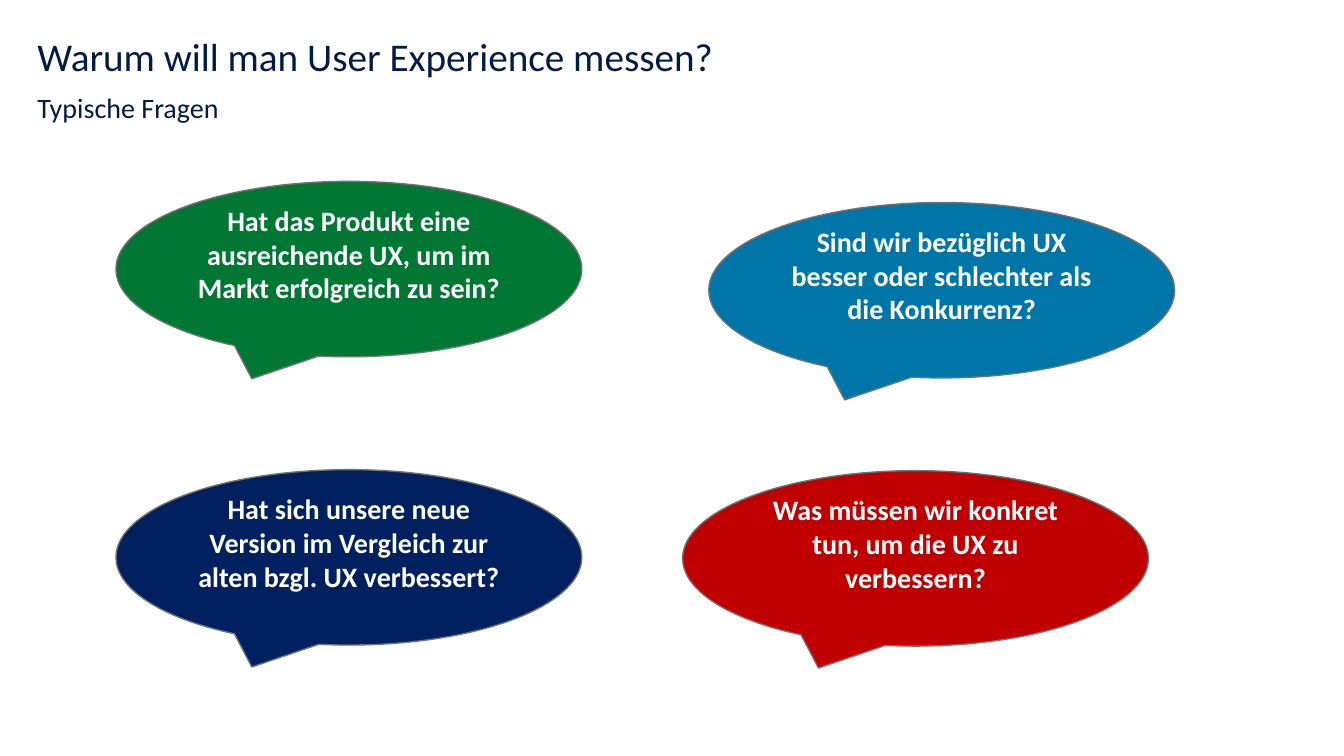
from pptx import Presentation
from pptx.dml.color import RGBColor
from pptx.enum.shapes import MSO_SHAPE
from pptx.enum.text import MSO_ANCHOR, MSO_AUTO_SIZE, PP_ALIGN
from pptx.util import Inches, Pt
from lxml import etree

CALLOUT = MSO_SHAPE.OVAL_CALLOUT
TOP, MIDDLE = MSO_ANCHOR.TOP, MSO_ANCHOR.MIDDLE
LEFT, CENTER = PP_ALIGN.LEFT, PP_ALIGN.CENTER
NO_AUTOFIT = MSO_AUTO_SIZE.NONE
A_NS = "{http://schemas.openxmlformats.org/drawingml/2006/main}"

COLORS = {
    "text": "021B45",
    "white": "FFFFFF",
    "outline": "717171",
    "green": "007833",
    "blue": "0076A8",
    "navy": "002060",
    "red": "C00000",
}

BUBBLE_W, BUBBLE_H = 4.62, 1.74
# left, top, colour, question
QUESTIONS = [
    (1.15, 1.8, "green", "Hat das Produkt eine ausreichende UX, um im Markt erfolgreich zu sein?"),
    (7.03, 2.01, "blue", "Sind wir bezüglich UX besser oder schlechter als die Konkurrenz?"),
    (1.15, 4.66, "navy", "Hat sich unsere neue Version im Vergleich zur alten bzgl. UX verbessert?"),
    (6.77, 4.67, "red", "Was müssen wir konkret tun, um die UX zu verbessern?"),
]


class SlideBuilder:
    """Holds the current slide and its text style."""

    font = "Calibri"

    def __init__(self, slide):
        self.s = slide

    def color(self, name):
        return RGBColor.from_string(COLORS[name])

    def place(self, sp, left, top, width, height):
        sp.left, sp.top = Inches(left), Inches(top)
        sp.width, sp.height = Inches(width), Inches(height)

    def set_text(self, sp, text, size, color, align, anchor, insets, bold=False):
        tf = sp.text_frame
        tf.word_wrap = True
        tf.auto_size = NO_AUTOFIT
        tf.vertical_anchor = anchor
        tf.margin_left, tf.margin_top, tf.margin_right, tf.margin_bottom = map(Inches, insets)
        p = tf.paragraphs[0]
        p.alignment = align
        r = p.add_run()
        r.text = text
        r.font.name = self.font
        r.font.size = Pt(size)
        r.font.bold = bold
        r.font.color.rgb = self.color(color)
        return p

    def title(self, text):
        sp = self.s.shapes.title
        self.place(sp, 0.37, 0.33, 12.6, 0.5)
        p = self.set_text(sp, text, 28, "text", LEFT, MIDDLE, (0, 0, 0, 0))
        p.line_spacing = 0.9

    def subtitle(self, text):
        sp = self.s.placeholders[1]
        self.place(sp, 0.37, 0.9, 12.6, 0.33)
        p = self.set_text(sp, text, 20, "text", LEFT, TOP, (0, 0, 0, 0))
        p.space_before = Pt(10)
        # Plain line without bullet or hanging indent
        pPr = p._p.get_or_add_pPr()
        pPr.set("marL", "0")
        pPr.set("indent", "0")
        etree.SubElement(pPr, A_NS + "buNone")

    def bubble(self, left, top, fill, text):
        sp = self.s.shapes.add_shape(
            CALLOUT, Inches(left), Inches(top), Inches(BUBBLE_W), Inches(BUBBLE_H))
        sp.shadow.inherit = False
        sp.fill.solid()
        sp.fill.fore_color.rgb = self.color(fill)
        sp.line.color.rgb = self.color("outline")
        sp.line.width = Pt(1)
        # The deeper bottom inset lifts the text above the middle
        self.set_text(sp, text, 20, "white", CENTER, MIDDLE, (0.1, 0.05, 0.1, 0.35), bold=True)


def main():
    prs = Presentation()
    prs.slide_width, prs.slide_height = Inches(13.33), Inches(7.5)
    builder = SlideBuilder(prs.slides.add_slide(prs.slide_layouts[1]))

    # Headings
    builder.title("Warum will man User Experience messen?")
    builder.subtitle("Typische Fragen")

    # Speech bubbles
    for question in QUESTIONS:
        builder.bubble(*question)

    prs.save("out.pptx")


if __name__ == "__main__":
    main()
